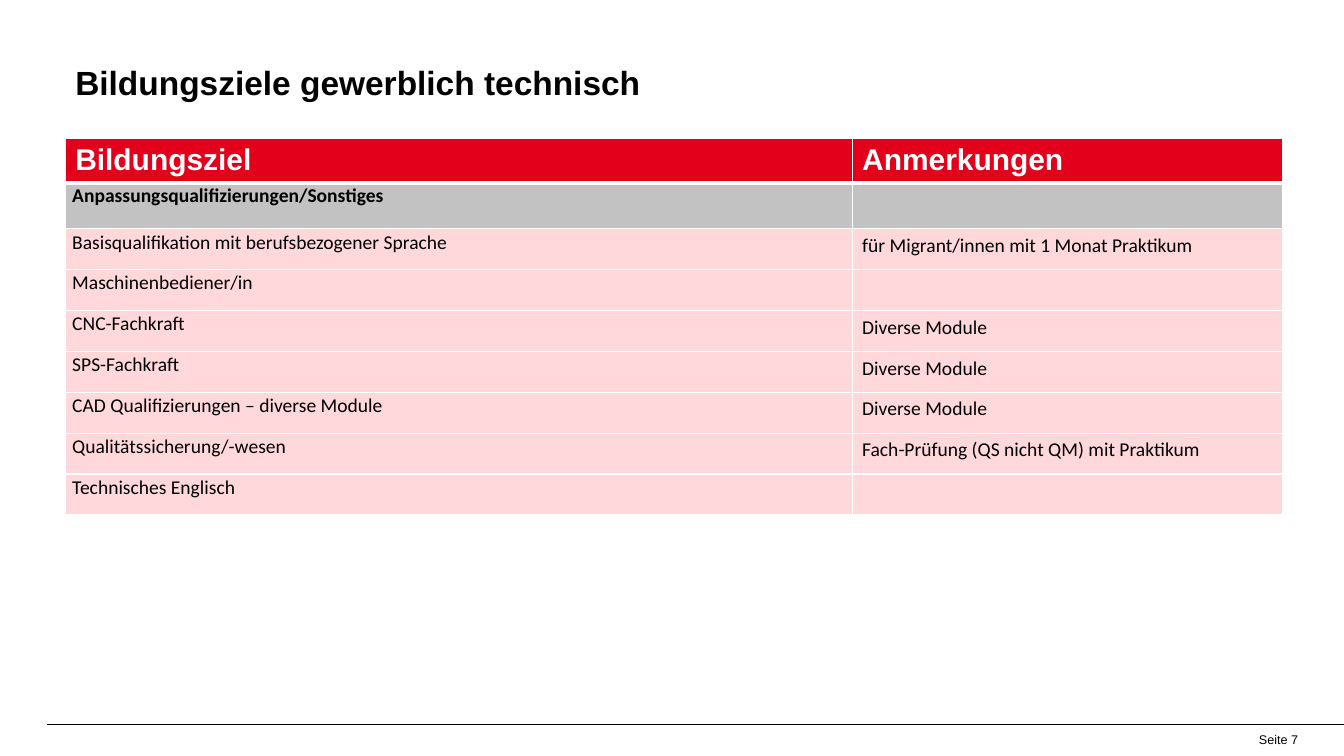
from typing import NamedTuple

from lxml.etree import SubElement
from pptx import Presentation
from pptx.dml.color import RGBColor
from pptx.enum.shapes import MSO_CONNECTOR
from pptx.enum.text import MSO_ANCHOR, PP_ALIGN
from pptx.oxml.ns import qn
from pptx.slide import Slide
from pptx.table import Table, _Cell
from pptx.text.text import _Paragraph
from pptx.util import Inches, Pt

BLACK = RGBColor(0x00, 0x00, 0x00)
WHITE = RGBColor(0xFF, 0xFF, 0xFF)
RED = RGBColor(0xE2, 0x00, 0x1A)
GRAY = RGBColor(0xC2, 0xC2, 0xC2)
PINK = RGBColor(0xFF, 0xD8, 0xDC)

SLIDE_WIDTH = Inches(13.39)
LEFT = Inches(0.65)
RULE_TOP = Inches(7.22)
COLUMN_WIDTHS = (Inches(7.84), Inches(4.29))
HEADER_HEIGHT = Inches(0.44)
SECTION_HEIGHT = Inches(0.46)
GOALS_HEIGHT = Inches(2.85)


class TextStyle(NamedTuple):
    font: str
    size: float
    color: RGBColor
    bold: bool = False


class Goal(NamedTuple):
    name: str
    remark: str = ""


TITLE_STYLE = TextStyle("Arial", 24, BLACK, True)
PAGE_STYLE = TextStyle("Arial", 9, BLACK)
HEADER_STYLE = TextStyle("Arial", 21.5, WHITE, True)
SECTION_STYLE = TextStyle("Calibri", 14, BLACK, True)
GOAL_STYLE = TextStyle("Calibri", 14, BLACK)

HEADER = Goal("Bildungsziel", "Anmerkungen")
SECTION = Goal("Anpassungsqualifizierungen/Sonstiges")
GOALS = (
    Goal("Basisqualifikation mit berufsbezogener Sprache",
         "für Migrant/innen mit 1 Monat Praktikum"),
    Goal("Maschinenbediener/in"),
    Goal("CNC-Fachkraft", "Diverse Module"),
    Goal("SPS-Fachkraft", "Diverse Module"),
    Goal("CAD Qualifizierungen – diverse Module", "Diverse Module"),
    Goal("Qualitätssicherung/-wesen", "Fach-Prüfung (QS nicht QM) mit Praktikum"),
    Goal("Technisches Englisch"),
)


def write(para: _Paragraph, text: str, style: TextStyle) -> None:
    para.text = text
    for font in [para.font] + [span.font for span in para.runs]:
        font.name = style.font
        font.size = Pt(style.size)
        font.color.rgb = style.color
        font.bold = style.bold


def add_borders(cell: _Cell, bottom: float) -> None:
    """Draw white borders of 1 pt, with the given width at the bottom."""
    properties = cell._tc.get_or_add_tcPr()
    for side, width in (("lnL", 1), ("lnR", 1), ("lnT", 1), ("lnB", bottom)):
        line = SubElement(properties, qn(f"a:{side}"), w=str(Pt(width)))
        fill = SubElement(line, qn("a:solidFill"))
        SubElement(fill, qn("a:srgbClr"), val=str(WHITE))


def fill_row(table: Table, index: int, height: int, goal: Goal,
             style: TextStyle, color: RGBColor) -> None:
    is_header = index == 0
    table.rows[index].height = height
    for column, text in enumerate(goal):
        cell = table.cell(index, column)
        add_borders(cell, bottom=3 if is_header else 1)
        cell.fill.solid()
        cell.fill.fore_color.rgb = color
        para = cell.text_frame.paragraphs[0]
        write(para, text, style)
        if column == 0 and not is_header:
            cell.margin_left = cell.margin_right = Inches(0.07)
            cell.margin_top = cell.margin_bottom = 0
            para.line_spacing = 1.07


def add_title(slide: Slide) -> None:
    title = slide.shapes.title
    title.left, title.top = LEFT, Inches(0.16)
    title.width, title.height = Inches(12.27), Inches(0.94)
    frame = title.text_frame
    frame.vertical_anchor = MSO_ANCHOR.BOTTOM
    frame.margin_bottom = Inches(0.08)
    para = frame.paragraphs[0]
    write(para, "Bildungsziele gewerblich technisch", TITLE_STYLE)
    para.alignment = PP_ALIGN.LEFT


def add_goal_table(slide: Slide) -> None:
    table = slide.shapes.add_table(
        len(GOALS) + 2, len(COLUMN_WIDTHS), LEFT, Inches(1.38),
        sum(COLUMN_WIDTHS), HEADER_HEIGHT + SECTION_HEIGHT + GOALS_HEIGHT,
    ).table
    for column, width in zip(table.columns, COLUMN_WIDTHS):
        column.width = width
    fill_row(table, 0, HEADER_HEIGHT, HEADER, HEADER_STYLE, RED)
    fill_row(table, 1, SECTION_HEIGHT, SECTION, SECTION_STYLE, GRAY)
    for index, goal in enumerate(GOALS, start=2):
        fill_row(table, index, GOALS_HEIGHT // len(GOALS), goal, GOAL_STYLE, PINK)


def add_footer(slide: Slide) -> None:
    rule = slide.shapes.add_connector(
        MSO_CONNECTOR.STRAIGHT, Inches(0.47), RULE_TOP, SLIDE_WIDTH, RULE_TOP)
    rule.line.color.rgb = BLACK
    rule.line.width = Pt(0.5)
    SubElement(rule._element.spPr, qn("a:effectLst"))

    box = slide.shapes.add_textbox(Inches(12.09), RULE_TOP, Inches(0.94), Inches(0.3))
    frame = box.text_frame
    frame.word_wrap = True
    frame.vertical_anchor = MSO_ANCHOR.MIDDLE
    para = frame.paragraphs[0]
    write(para, "Seite 7", PAGE_STYLE)
    para.alignment = PP_ALIGN.RIGHT


def main() -> None:
    deck = Presentation()
    deck.slide_width, deck.slide_height = SLIDE_WIDTH, Inches(7.53)
    slide = deck.slides.add_slide(deck.slide_layouts.get_by_name("Title Only"))
    add_title(slide)
    add_goal_table(slide)
    add_footer(slide)
    deck.save("out.pptx")


if __name__ == "__main__":
    main()
